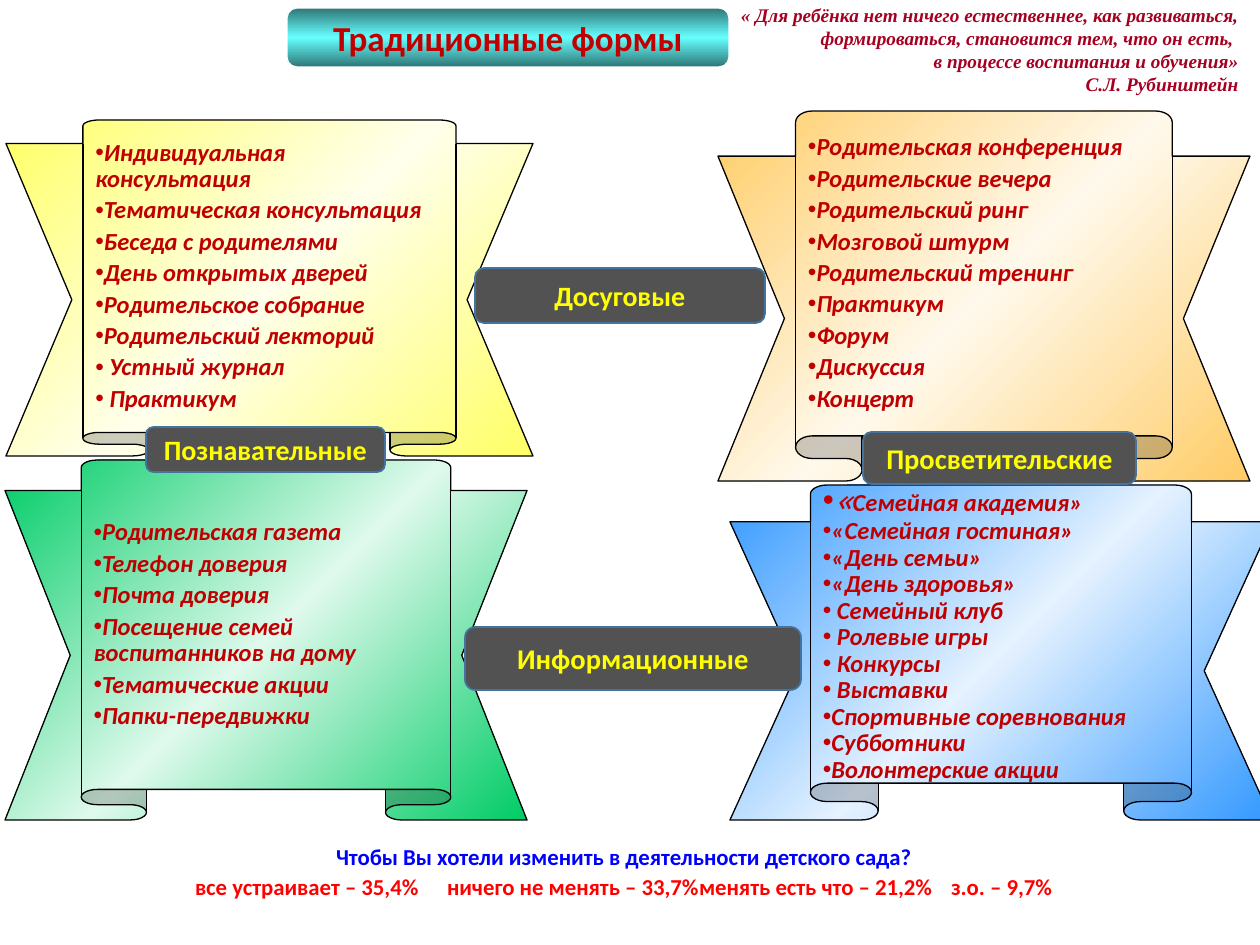
"""Build a slide about forms of work between a kindergarten and parents."""
from copy import deepcopy
from dataclasses import dataclass

from lxml import etree
from pptx import Presentation
from pptx.dml.color import RGBColor
from pptx.enum.shapes import MSO_SHAPE
from pptx.enum.text import MSO_ANCHOR, MSO_AUTO_SIZE, PP_ALIGN
from pptx.oxml.ns import qn
from pptx.util import Emu, Pt

RIBBON = MSO_SHAPE.UP_RIBBON
ROUNDED = MSO_SHAPE.ROUNDED_RECTANGLE
MIDDLE = MSO_ANCHOR.MIDDLE
FIT_SHAPE = MSO_AUTO_SIZE.SHAPE_TO_FIT_TEXT
LEFT, CENTER, RIGHT = PP_ALIGN.LEFT, PP_ALIGN.CENTER, PP_ALIGN.RIGHT
SCALE = 914400 / 126


@dataclass(frozen=True)
class Theme:
    """Colours, fonts and type sizes of the slide."""
    body: str = "Calibri"
    serif: str = "Times New Roman"
    mono: str = "Noto Sans Mono"
    red: str = "C00000"
    crimson: str = "A50021"
    answer: str = "FF0000"
    question: str = "0000FF"
    label_text: str = "FFFF00"
    label_fill: str = "525252"
    label_line: str = "43739E"
    black: str = "000000"
    white: str = "FFFFFF"
    teal: tuple = ("2F7676", "66FFFF")
    yellow: tuple = ("FFFF66", "FFFFEC")
    orange: tuple = ("FFCC66", "FFF9EC")
    green: tuple = ("00CC66", "DFF9EC")
    blue: tuple = ("3399FF", "E5F2FF")
    title_size: float = 20
    quote_mark_size: float = 18
    label_size: float = 16
    wide_label_size: float = 16.3
    list_size: float = 14
    survey_size: float = 13
    quote_size: float = 11


THEME = Theme()

RIBBONS = [
    ((6, 120, 527, 336), THEME.yellow, (0.07, 0.708), 2.8, [
        "Индивидуальная консультация", "Тематическая консультация",
        "Беседа с родителями", "День открытых дверей",
        "Родительское собрание", "Родительский лекторий",
        " Устный журнал", " Практикум"]),
    ((718, 111, 532, 370), THEME.orange, (0.122, 0.708), 2.8, [
        "Родительская конференция", "Родительские вечера",
        "Родительский ринг", "Мозговой штурм", "Родительский тренинг",
        "Практикум", "Форум", "Дискуссия", "Концерт"]),
    ((5, 460, 522, 360), THEME.green, (0.085, 0.708), 2.8, [
        "Родительская газета", "Телефон доверия", "Почта доверия",
        "Посещение семей воспитанников на дому", "Тематические акции",
        "Папки-передвижки"]),
    ((730, 485, 542, 335), THEME.blue, (0.11, 0.703), 0, [
        "Семейная академия»", "«Семейная гостиная»", "«День семьи»",
        "«День здоровья»", " Семейный клуб", " Ролевые игры",
        " Конкурсы", " Выставки", "Спортивные соревнования",
        "Субботники", "Волонтерские акции"]),
]

LABELS = [
    ((475, 268, 290, 55), "Досуговые", THEME.label_size),
    ((146, 427, 239, 45), "Познавательные", THEME.label_size),
    ((863, 432, 273, 52), "Просветительские", THEME.wide_label_size),
    ((465, 627, 336, 63), "Информационные", THEME.wide_label_size),
]

QUOTE = [
    "« Для ребёнка нет ничего естественнее, как развиваться, "
    "формироваться, становится тем, что он есть, ",
    "в процессе воспитания и обучения»",
    "С.Л. Рубинштейн",
]

SURVEY = [
    ("Чтобы Вы хотели изменить в деятельности детского сада?", THEME.question),
    ("все устраивает – 35,4% \tничего не менять – 33,7%"
     "\tменять есть что – 21,2%\tз.о. – 9,7%", THEME.answer),
]


def to_emu(box):
    """Turn a box in px into EMU lengths."""
    return [Emu(round(length * SCALE)) for length in box]


def add_run(paragraph, text, size, color, font=THEME.body, bold=True, italic=False):
    """Add one styled run."""
    run = paragraph.add_run()
    run.text = text
    run.font.name, run.font.size = font, Pt(size)
    run.font.bold, run.font.italic = bold, italic
    run.font.color.rgb = RGBColor.from_string(color)


def add_paragraph(frame, align, spacing=None, before=0):
    """Return the empty first paragraph, or a new one."""
    first = frame.paragraphs[0]
    paragraph = frame.add_paragraph() if first.runs else first
    paragraph.alignment = align
    paragraph.line_spacing = spacing
    paragraph.space_before = Pt(before)
    return paragraph


def add_bullet(paragraph):
    """Put a round bullet before the paragraph."""
    properties = paragraph._p.get_or_add_pPr()
    etree.SubElement(properties, qn("a:buFont"), typeface="Arial")
    etree.SubElement(properties, qn("a:buChar"), char="•")


def fill_gradient(shape, colors, angle):
    """Fill with an edge colour that passes through a middle one."""
    edge, middle = colors
    shape.fill.gradient()
    shape.fill.gradient_angle = angle
    stop_list = shape._element.spPr.find(".//" + qn("a:gsLst"))
    stop_list.insert(1, deepcopy(stop_list[0]))
    for stop, position, color in zip(
            shape.fill.gradient_stops, (0, 0.5, 1), (edge, middle, edge)):
        stop.position = position
        stop.color.rgb = RGBColor.from_string(color)


def add_panel(slide, preset, box, line_color, line_width):
    """Add an outlined shape with middle-anchored text."""
    panel = slide.shapes.add_shape(preset, *to_emu(box))
    panel.shadow.inherit = False
    panel.line.color.rgb = RGBColor.from_string(line_color)
    panel.line.width = Pt(line_width)
    panel.text_frame.word_wrap = True
    panel.text_frame.vertical_anchor = MIDDLE
    return panel


def add_ribbon(slide, box, colors, folds, before, items):
    """Add a ribbon with its bulleted list."""
    ribbon = add_panel(slide, RIBBON, box, THEME.black, 0.75)
    ribbon.adjustments[0], ribbon.adjustments[1] = folds
    fill_gradient(ribbon, colors, 315)
    for item in items:
        paragraph = add_paragraph(ribbon.text_frame, LEFT, 0.9, before)
        add_bullet(paragraph)
        if item.endswith("»") and "«" not in item:
            add_run(paragraph, "«", THEME.quote_mark_size, THEME.red,
                    THEME.mono, bold=False, italic=True)
        add_run(paragraph, item, THEME.list_size, THEME.red, italic=True)


def add_title(slide, box):
    """Add the title plate."""
    title = add_panel(slide, ROUNDED, box, THEME.white, 0.75)
    fill_gradient(title, THEME.teal, 270)
    paragraph = add_paragraph(title.text_frame, CENTER, before=4)
    add_run(paragraph, "Традиционные формы", THEME.title_size, THEME.red)


def add_label(slide, box, text, size):
    """Add a dark plate naming a group of forms."""
    label = add_panel(slide, ROUNDED, box, THEME.label_line, 1)
    label.fill.solid()
    label.fill.fore_color.rgb = RGBColor.from_string(THEME.label_fill)
    add_run(add_paragraph(label.text_frame, CENTER), text, size, THEME.label_text)


def add_text_frame(slide, box):
    """Add a wrapping text box and return its frame."""
    frame = slide.shapes.add_textbox(*to_emu(box)).text_frame
    frame.word_wrap = True
    frame.auto_size = FIT_SHAPE
    return frame


def add_quote(slide, box):
    """Add the quotation with its author."""
    frame = add_text_frame(slide, box)
    for line in QUOTE:
        add_run(add_paragraph(frame, RIGHT), line, THEME.quote_size,
                THEME.crimson, THEME.serif, italic=True)


def add_survey(slide, box):
    """Add the survey question and its answers."""
    frame = add_text_frame(slide, box)
    for line, color in SURVEY:
        add_run(add_paragraph(frame, CENTER, 1.07), line, THEME.survey_size, color)


def main():
    """Build and save the slide."""
    deck = Presentation()
    deck.slide_width, deck.slide_height = to_emu((1260, 945))
    slide = deck.slides.add_slide(deck.slide_layouts[6])
    for ribbon in RIBBONS:
        add_ribbon(slide, *ribbon)
    add_title(slide, (287, 8, 442, 59))
    for label in LABELS:
        add_label(slide, *label)
    add_quote(slide, (723, -3, 528, 106))
    add_survey(slide, (88, 835, 1071, 71))
    deck.save("out.pptx")


if __name__ == "__main__":
    main()
